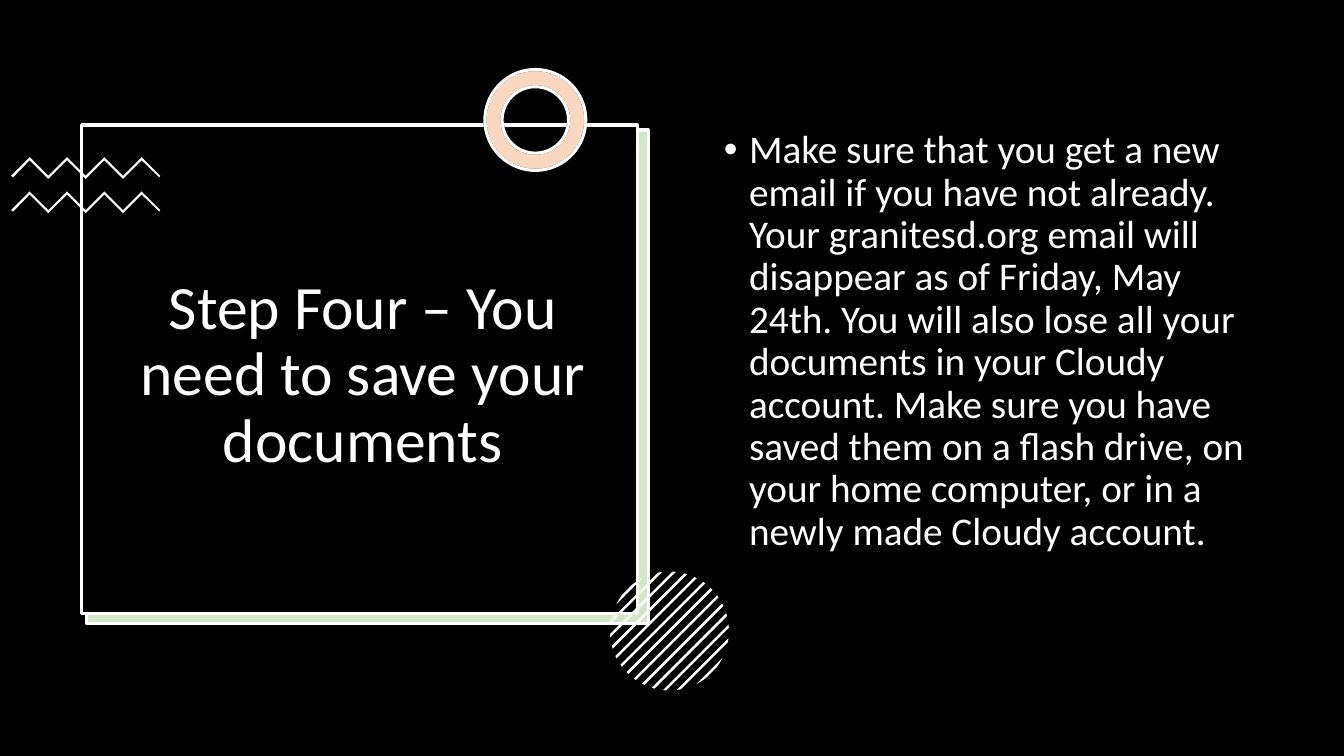
from math import acos, cos, pi, sin, sqrt

from lxml.etree import SubElement
from pptx import Presentation
from pptx.dml.color import RGBColor
from pptx.enum.shapes import MSO_SHAPE as Preset
from pptx.enum.text import MSO_ANCHOR as Anchor, MSO_AUTO_SIZE as AutoSize, PP_ALIGN as Align
from pptx.oxml.ns import qn
from pptx.util import Inches, Pt

BLACK = RGBColor(0x00, 0x00, 0x00)
WHITE = RGBColor(0xFF, 0xFF, 0xFF)
GREEN = RGBColor(0x70, 0xAD, 0x47)
ORANGE = RGBColor(0xED, 0x7D, 0x31)


def paint(shape, fill, line=None, opacity=None):
    """Set fill, outline and optional fill opacity in percent."""
    shape.shadow.inherit = False
    shape.fill.solid()
    shape.fill.fore_color.rgb = fill
    if opacity is not None:
        color = shape.element.find(".//" + qn("a:srgbClr"))
        SubElement(color, qn("a:alpha"), val=str(opacity * 1000))
    if line is None:
        shape.line.fill.background()
    else:
        shape.line.color.rgb = line
        shape.line.width = Pt(2.25)


def write_text(shape, text, box, size, align, anchor, indent=0):
    """Move a placeholder to box and fill it with one formatted paragraph."""
    shape.left, shape.top, shape.width, shape.height = map(Inches, box)
    frame = shape.text_frame
    frame.text = text
    frame.word_wrap = True
    frame.auto_size = AutoSize.NONE
    frame.vertical_anchor = anchor
    paragraph = frame.paragraphs[0]
    properties = paragraph._p.get_or_add_pPr()
    properties.set("marL", str(Inches(indent)))
    properties.set("indent", str(-Inches(indent)))
    paragraph.alignment = align
    paragraph.line_spacing = 0.9
    paragraph.space_before = Pt(0)
    paragraph.font.name = "Calibri"
    paragraph.font.size = Pt(size)
    paragraph.font.color.rgb = WHITE


presentation = Presentation()
presentation.slide_width = Inches(13.33)
presentation.slide_height = Inches(7.5)
slide = presentation.slides.add_slide(presentation.slide_layouts[1])
title, body = slide.placeholders

# Backdrop, framed card with its tinted offset, and ring
decorations = [
    (Preset.RECTANGLE, (0, 0, 13.33, 7.5), BLACK, None, None),
    (Preset.RECTANGLE, (0.85, 1.3, 5.57, 4.9), WHITE, None, None),
    (Preset.RECTANGLE, (0.86, 1.29, 5.57, 4.9), GREEN, WHITE, 30),
    (Preset.RECTANGLE, (0.81, 1.24, 5.51, 4.85), BLACK, WHITE, None),
    (Preset.DONUT, (4.81, 0.69, 1, 1), WHITE, BLACK, None),
    (Preset.DONUT, (4.81, 0.69, 1, 1), ORANGE, WHITE, 30),
]
for preset, box, fill, line, opacity in decorations:
    shape = slide.shapes.add_shape(preset, *map(Inches, box))
    if preset == Preset.DONUT:
        shape.adjustments[0] = 0.17
    paint(shape, fill, line, opacity)

# Two zigzag ribbons
zigzags = []
for top in (1.56, 1.9):
    upper = [(0.11 + 0.185 * i, top + 0.185 * (1 - i % 2)) for i in range(9)]
    lower = [(x, y + 0.03) for x, y in upper[1:-1]]
    ends = [(0.13, top + 0.2), (1.58, top + 0.2)]
    zigzags.append(upper + ends[1:] + lower[::-1] + ends[:1])

# Diagonal stripes cut to a circle
CENTER_X, CENTER_Y, RADIUS = 6.64, 6.26, 0.59
PITCH, HALF_WIDTH, ARC_STEPS = 0.135 / sqrt(2), 0.018 / sqrt(2), 8
stripes = []
for number in range(-6, 7):
    near, far = (
        acos(max(-1, min(1, (number * PITCH + edge) / RADIUS)))
        for edge in (-HALF_WIDTH, HALF_WIDTH)
    )
    arc = [near + (far - near) * step / ARC_STEPS for step in range(ARC_STEPS + 1)]
    angles = [pi / 4 + a for a in arc] + [pi / 4 - a for a in reversed(arc)]
    stripes.append([(CENTER_X + RADIUS * cos(a), CENTER_Y + RADIUS * sin(a)) for a in angles])

for outlines in (zigzags, stripes):
    group = slide.shapes.add_group_shape()
    for outline in outlines:
        points = [(Inches(x), Inches(y)) for x, y in outline]
        builder = group.shapes.build_freeform(*points[0])
        builder.add_line_segments(points[1:], close=True)
        paint(builder.convert_to_shape(), WHITE)

# Text stands in front of the decorations
for placeholder in (title, body):
    placeholder.element.getparent().append(placeholder.element)
write_text(title, "Step Four – You need to save your documents",
           box=(0.92, 1.52, 5.36, 4.42), size=44, align=Align.CENTER, anchor=Anchor.MIDDLE)
write_text(body, "Make sure that you get a new email if you have not already. "
           "Your granitesd.org email will disappear as of Friday, May 24th. "
           "You will also lose all your documents in your Cloudy account. "
           "Make sure you have saved them on a flash drive, on your home computer, "
           "or in a newly made Cloudy account.",
           box=(7.08, 1.24, 5.44, 4.76), size=28, align=Align.LEFT, anchor=Anchor.TOP,
           indent=0.25)

presentation.save("out.pptx")
